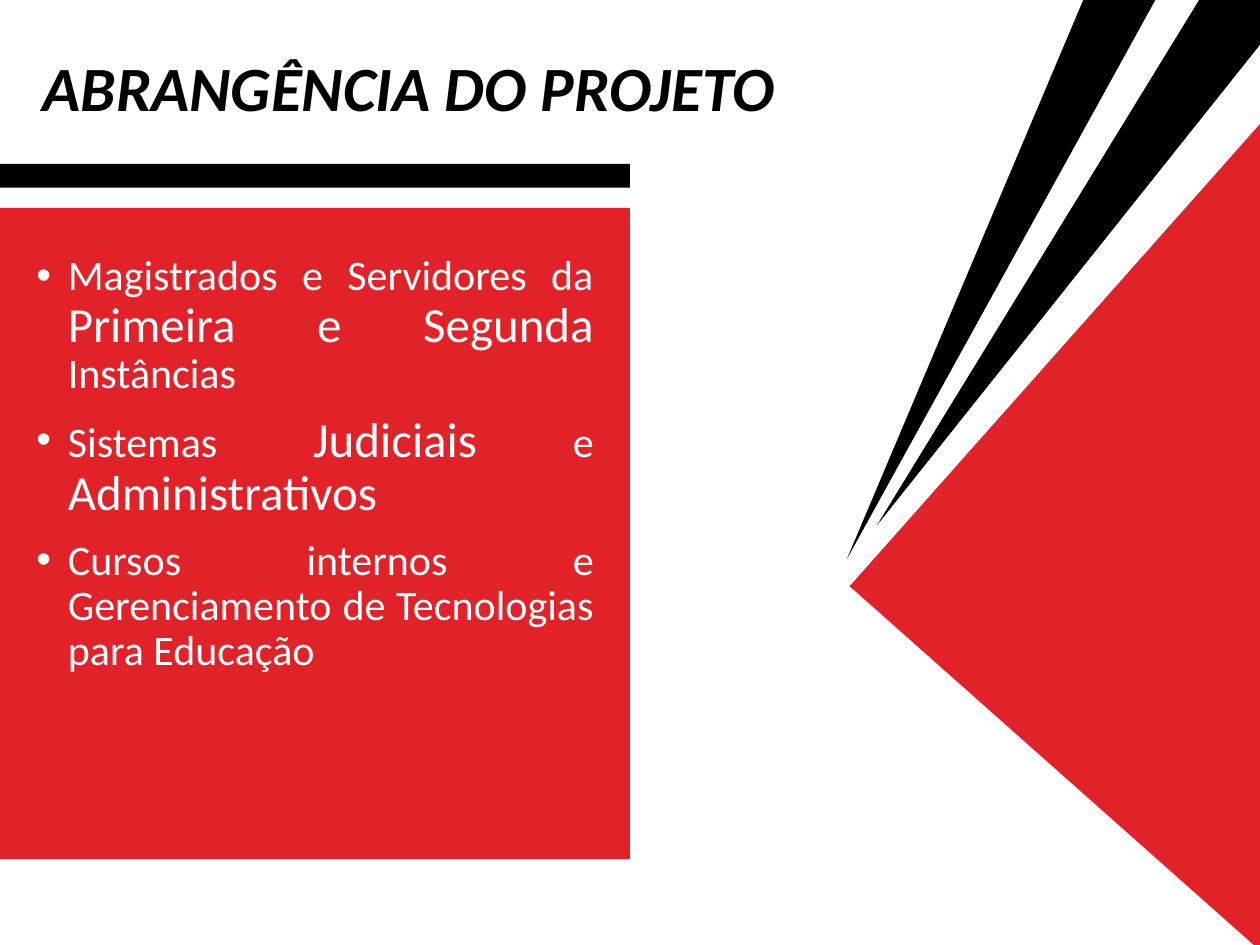
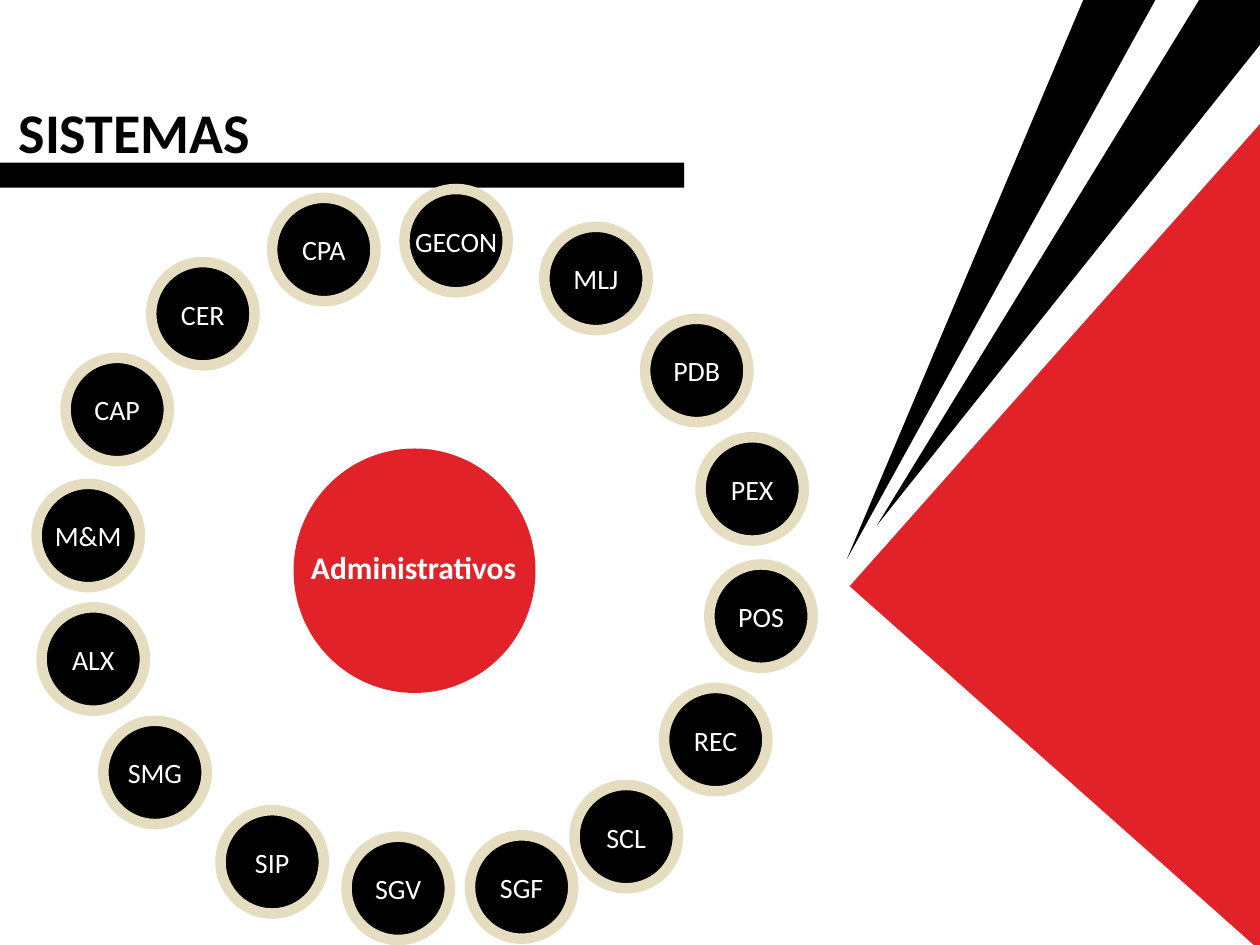
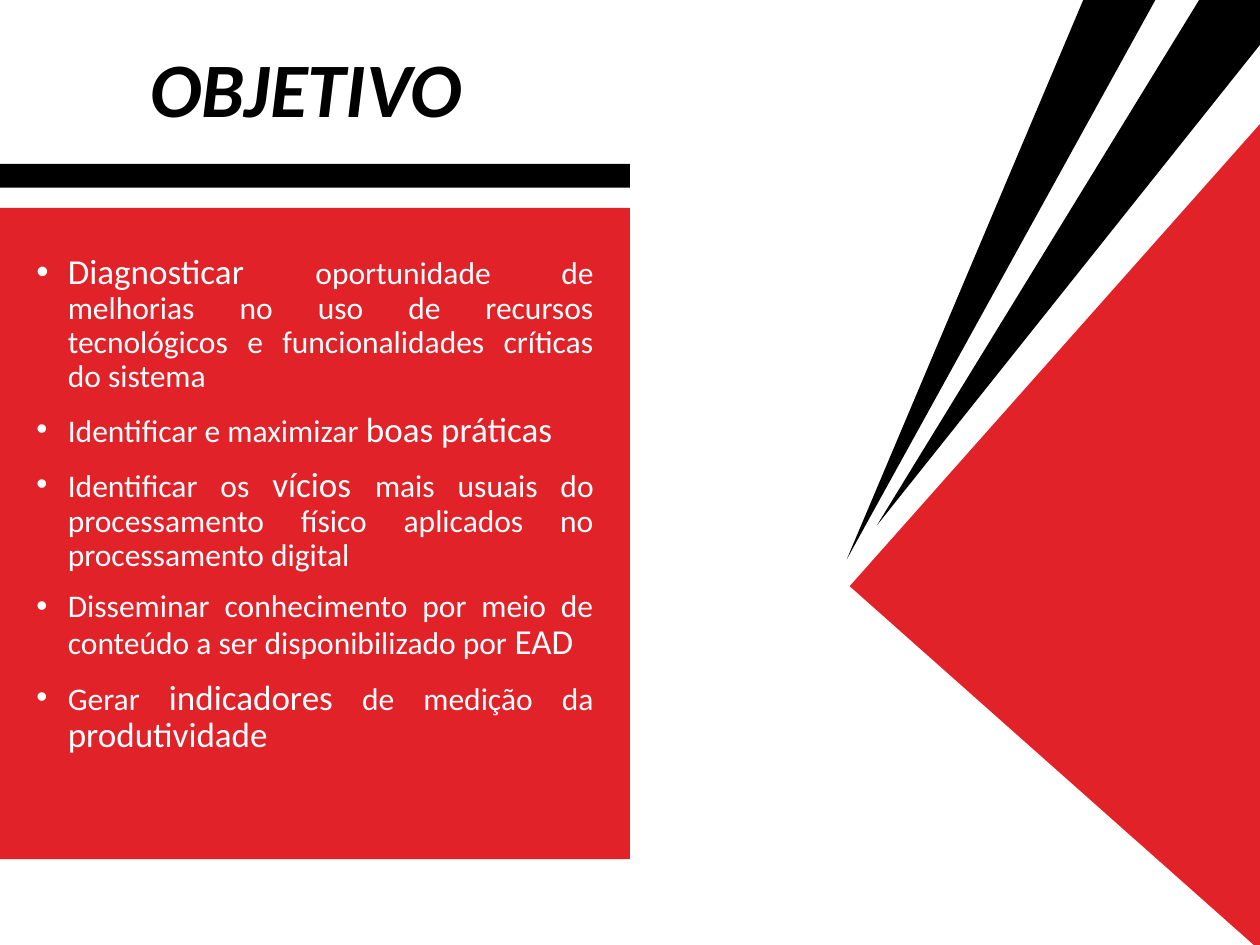
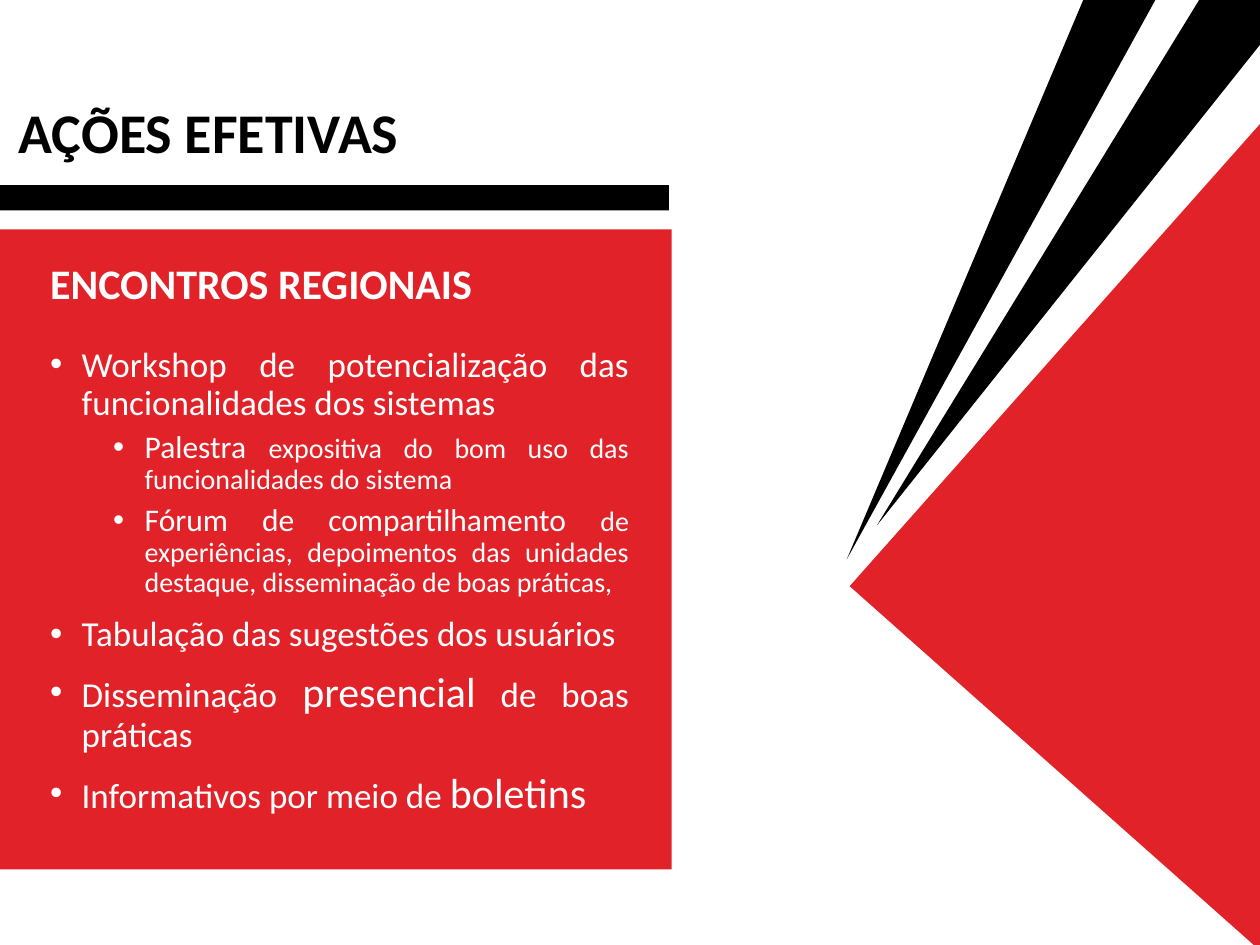
from lxml import etree
from pptx import Presentation
from pptx.dml.color import RGBColor
from pptx.enum import shapes, text
from pptx.oxml import ns
from pptx.util import Inches, Pt

COLORS = {"red": "E12229", "black": "000000", "white": "FFFFFF", "ring": "E6DDC0"}
FONT = "Calibri"
BADGE = 0.82
LABEL_W, LABEL_H, LABEL_DROP = 0.9, 0.37, 0.23

BLADES = [
    [(8.91, -0.74), (9.44, -0.49), (6.72, 4.44)],
    [(9.72, -0.33), (10.26, 0.03), (6.96, 4.17)],
]

# Each paragraph is (level, [(words, size), ...])
SCOPE = [
    (0, [("Magistrados e Servidores da ", 24), ("Primeira e Segunda ", 28),
         ("Instâncias", 24)]),
    (0, [("Sistemas ", 24), ("Judiciais", 28), (" e ", 24), ("Administrativos", 28)]),
    (0, [("Cursos internos e Gerenciamento de Tecnologias para Educação", 24)]),
]
GOALS = [
    (0, [("Diagnosticar ", 20),
         ("oportunidade de melhorias no uso de recursos tecnológicos e "
          "funcionalidades críticas do sistema", 18)]),
    (0, [("Identificar e maximizar ", 18), ("boas práticas", 20)]),
    (0, [("Identificar os ", 18), ("vícios ", 20),
         ("mais usuais do processamento físico aplicados no processamento digital", 18)]),
    (0, [("Disseminar conhecimento por meio de conteúdo a ser disponibilizado por ", 18),
         ("EAD", 20)]),
    (0, [("Gerar ", 18), ("indicadores", 20), (" de medição da ", 18),
         ("produtividade", 20)]),
]
ACTIONS = [
    (0, [("Workshop de potencialização das funcionalidades dos sistemas", 20)]),
    (1, [("Palestra ", 18), ("expositiva do bom uso das funcionalidades do sistema", 16)]),
    (1, [("Fórum de compartilhamento ", 18),
         ("de experiências, depoimentos das unidades destaque, "
          "disseminação de boas práticas,", 16)]),
    (0, [("Tabulação das sugestões dos usuários", 20)]),
    (0, [("Disseminação ", 20), ("presencial", 24), (" de boas práticas", 20)]),
    (0, [("Informativos por meio de ", 20), ("boletins", 24)]),
]
SYSTEMS = [
    ("CPA", 2.16, 1.57), ("MLJ", 4.32, 1.8), ("CER", 1.2, 2.08), ("CAP", 0.52, 2.84),
    ("ALX", 0.33, 4.82), ("M&M", 0.29, 3.84), ("PDB", 5.12, 2.53), ("PEX", 5.56, 3.47),
    ("POS", 5.63, 4.48), ("REC", 5.27, 5.46), ("SCL", 4.56, 6.23), ("SIP", 1.75, 6.43),
    ("SMG", 0.82, 5.72), ("GECON", 3.21, 1.5), ("SGF", 3.73, 6.63), ("SGV", 2.75, 6.64),
]


def rgb(name):
    return RGBColor.from_string(COLORS[name])


def inches(box):
    return [Inches(v) for v in box]


def paint(sp, fill, line=None, width=1):
    sp.shadow.inherit = False
    sp.fill.solid()
    sp.fill.fore_color.rgb = rgb(fill)
    if line:
        sp.line.color.rgb = rgb(line)
        sp.line.width = Pt(width)
    else:
        sp.line.fill.background()
    return sp


def add_block(parent, box, fill, kind=shapes.MSO_SHAPE.RECTANGLE, **line):
    return paint(parent.add_shape(kind, *inches(box)), fill, **line)


def add_box(parent, box, wrap=True):
    tf = parent.add_textbox(*inches(box)).text_frame
    tf.word_wrap = wrap
    return tf


def style(p, color, size=None, align=text.PP_ALIGN.LEFT, bold=False, italic=False):
    p.alignment = align
    font = p.font
    font.name, font.bold, font.italic = FONT, bold, italic
    font.color.rgb = rgb(color)
    if size:
        font.size = Pt(size)


def write(tf, words, color, size, **look):
    p = tf.paragraphs[0]
    p.text = words
    style(p, color, size, **look)
    return p


def add_bullet(p, level):
    pPr = p._p.get_or_add_pPr()
    pPr.set("marL", str(Inches(0.25 + 0.5 * level)))
    pPr.set("indent", str(Inches(-0.25)))
    font = etree.Element(ns.qn("a:buFont"), typeface="Arial")
    char = etree.Element(ns.qn("a:buChar"), char="•")
    # Bullets precede the default run properties in the schema
    at = pPr.index(pPr.find(ns.qn("a:defRPr")))
    pPr[at:at] = [font, char]


def add_body(slide, box, items, heading=None):
    tf = add_box(slide.shapes, box)
    if heading:
        p = write(tf, heading, "white", 24, bold=True)
        p.line_spacing, p.space_before, p.space_after = 0.9, Pt(10), Pt(12)
    for i, (level, runs) in enumerate(items):
        p = tf.add_paragraph() if heading or i else tf.paragraphs[0]
        p.level = level
        p.line_spacing, p.space_before = 0.9, Pt(5 if level else 10)
        style(p, "white", align=text.PP_ALIGN.JUSTIFY)
        add_bullet(p, level)
        for words, size in runs:
            r = p.add_run()
            r.text = words
            r.font.size = Pt(size)


def add_fan(slide):
    """Two black blades and the tilted red square on the right edge."""
    group = slide.shapes.add_group_shape().shapes
    for blade in BLADES:
        start, *rest = [inches(point) for point in blade]
        outline = group.build_freeform(*start)
        outline.add_line_segments(rest, close=True)
        paint(outline.convert_to_shape(), "black")
    add_block(group, (7.92, 1.54, 5.75, 5.73), "red").rotation = 311.6


def add_boxed_title(slide, box, words, size):
    sp = add_block(slide.shapes, box, "white", line="white")
    tf = sp.text_frame
    tf.word_wrap = True
    tf.vertical_anchor = text.MSO_ANCHOR.MIDDLE
    write(tf, words, "black", size, align=text.PP_ALIGN.CENTER, bold=True, italic=True)


def add_left_title(slide, words):
    tf = add_box(slide.shapes, (0.05, 0.35, 4.23, 1.45))
    tf.vertical_anchor = text.MSO_ANCHOR.MIDDLE
    write(tf, words, "black", 32, bold=True).line_spacing = 0.9


def add_badge(slide, name, x, y):
    group = slide.shapes.add_group_shape().shapes
    add_block(group, (x, y, BADGE, BADGE), "black", shapes.MSO_SHAPE.OVAL,
              line="ring", width=6)
    label = (x + (BADGE - LABEL_W) / 2, y + LABEL_DROP, LABEL_W, LABEL_H)
    write(add_box(group, label), name, "white", 16, align=text.PP_ALIGN.CENTER)


def add_hub(slide, x, y, w, h, name):
    group = slide.shapes.add_group_shape().shapes
    add_block(group, (x, y, w, h), "red", shapes.MSO_SHAPE.OVAL)
    tf = add_box(group, (x + 0.04, y + 0.74, w - 0.08, 0.4), wrap=False)
    write(tf, name, "white", 18, bold=True)


def new_slide(prs):
    return prs.slides.add_slide(prs.slide_layouts[6])


def list_slide(prs, title, title_box, title_size, items):
    slide = new_slide(prs)
    add_block(slide.shapes, (-0.08, 1.65, 5.08, 5.17), "red")
    add_body(slide, (0.19, 1.97, 4.62, 3.94), items)
    add_block(slide.shapes, (0, 1.3, 5, 0.19), "black")
    add_fan(slide)
    add_boxed_title(slide, title_box, title, title_size)


def systems_slide(prs):
    slide = new_slide(prs)
    add_fan(slide)
    add_left_title(slide, "SISTEMAS")
    add_block(slide.shapes, (0, 1.29, 5.43, 0.2), "black")
    add_hub(slide, 2.33, 3.56, 1.92, 1.94, "Administrativos")
    for system in SYSTEMS:
        add_badge(slide, *system)


def actions_slide(prs):
    slide = new_slide(prs)
    add_block(slide.shapes, (-0.15, 1.82, 5.48, 5.08), "red")
    add_left_title(slide, "AÇÕES EFETIVAS")
    add_body(slide, (0.3, 2.04, 4.79, 4.76), ACTIONS, "ENCONTROS REGIONAIS")
    add_block(slide.shapes, (0, 1.47, 5.31, 0.2), "black")
    add_fan(slide)


def main():
    prs = Presentation()
    prs.slide_width, prs.slide_height = Inches(10), Inches(7.5)
    list_slide(prs, "ABRANGÊNCIA DO PROJETO", (-0.08, 0.32, 6.65, 0.73), 36, SCOPE)
    systems_slide(prs)
    list_slide(prs, "OBJETIVO", (0.63, 0.32, 3.6, 0.73), 44, GOALS)
    actions_slide(prs)
    prs.save("out.pptx")


if __name__ == "__main__":
    main()
